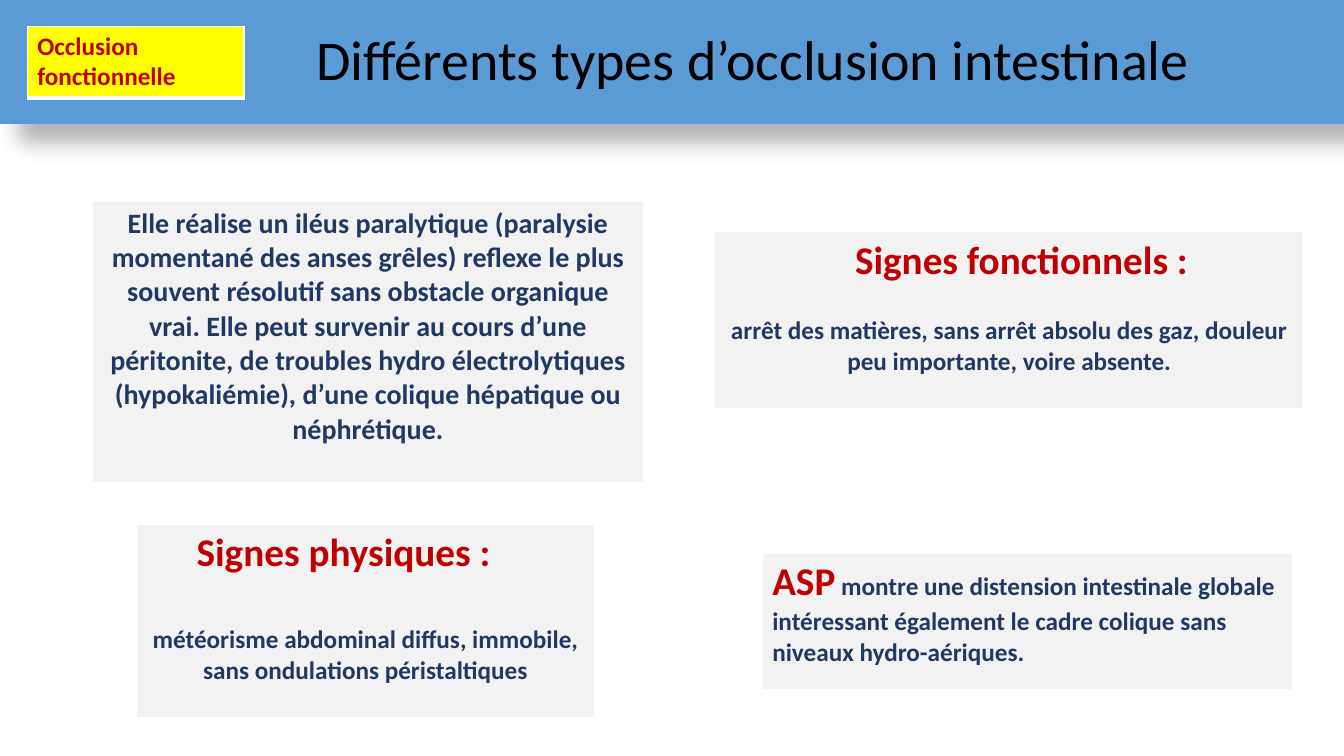
from dataclasses import dataclass

import lxml.etree
import pptx
import pptx.dml.color
import pptx.enum.shapes
import pptx.enum.text
import pptx.oxml
import pptx.oxml.ns
import pptx.util

Inches = pptx.util.Inches
Align = pptx.enum.text.PP_ALIGN


@dataclass(frozen=True)
class Theme:
    font: str = "Calibri"
    banner: str = "5B9BD5"
    title_color: str = "000000"
    panel: str = "F2F2F2"
    label: str = "FFFF00"
    border: str = "FFFFFF"
    accent: str = "C00000"
    body: str = "203864"
    title_size: int = 40
    heading_size: int = 28
    lead_size: int = 20
    body_size: int = 18


THEME = Theme()


@dataclass(frozen=True)
class Span:
    text: str
    size: int = THEME.body_size
    color: str = THEME.body


@dataclass(frozen=True)
class Para:
    spans: tuple[Span, ...]
    align: Align = Align.LEFT
    indent: float = 0
    space_before: int = 0


@dataclass(frozen=True)
class Panel:
    left: float
    top: float
    width: float
    height: float
    paras: tuple[Para, ...]
    fill: str = THEME.panel


def heading(text: str) -> Span:
    return Span(text, THEME.heading_size, THEME.accent)


PANELS = (
    Panel(0.92, 2, 5.46, 2.8, (
        Para((Span(
            "Elle réalise un iléus paralytique (paralysie momentané des anses grêles) "
            "reflexe le plus souvent résolutif sans obstacle organique vrai. Elle peut "
            "survenir au cours d’une péritonite, de troubles hydro électrolytiques "
            "(hypokaliémie), d’une colique hépatique ou néphrétique.",
            THEME.lead_size),), Align.CENTER),
    )),
    Panel(0.27, 0.26, 2.15, 0.7, (
        Para((Span("Occlusion fonctionnelle", color=THEME.accent),)),
    ), THEME.label),
    Panel(7.09, 2.3, 5.84, 1.77, (
        Para((heading("Signes fonctionnels :"),), indent=1.29),
        Para((Span("arrêt des matières, sans arrêt absolu des gaz, douleur "
                   "peu importante, voire absente."),), Align.CENTER, space_before=22),
    )),
    Panel(1.35, 5.2, 4.55, 1.93, (
        Para((heading("Signes physiques :"),), indent=0.5),
        Para((Span("météorisme abdominal diffus, immobile, "
                   "sans ondulations péristaltiques"),), Align.CENTER, space_before=34),
    )),
    Panel(7.56, 5.49, 5.26, 1.36, (
        Para((heading("ASP"),
              Span(" montre une distension intestinale globale intéressant également "
                   "le cadre colique sans niveaux hydro-aériques."))),
    )),
)


def rgb(color: str) -> pptx.dml.color.RGBColor:
    return pptx.dml.color.RGBColor.from_string(color)


def add_text(para, text: str, *, size: int, color: str, bold: bool = False) -> None:
    run = para.add_run()
    run.text = text
    run.font.name = THEME.font
    run.font.size = pptx.util.Pt(size)
    run.font.bold = bold
    run.font.color.rgb = rgb(color)


def add_shadow(shape) -> None:
    effects = pptx.oxml.parse_xml(
        f'<a:effectLst {pptx.oxml.ns.nsdecls("a")}>'
        f'<a:outerShdw blurRad="{pptx.util.Pt(15)}" dist="{pptx.util.Pt(18)}" '
        'dir="2700000" algn="tl" rotWithShape="0">'
        '<a:srgbClr val="000000"><a:alpha val="30000"/></a:srgbClr>'
        '</a:outerShdw></a:effectLst>')
    shape.element.spPr.append(effects)


def add_banner(page, text: str) -> None:
    banner = page.shapes.add_shape(
        pptx.enum.shapes.MSO_SHAPE.RECTANGLE, 0, 0, Inches(13.33), Inches(1.23))
    banner.fill.solid()
    banner.fill.fore_color.rgb = rgb(THEME.banner)
    banner.line.fill.background()
    add_shadow(banner)
    frame = banner.text_frame
    frame.word_wrap = True
    frame.margin_left = Inches(1.7)
    frame.vertical_anchor = pptx.enum.text.MSO_ANCHOR.MIDDLE
    para = frame.paragraphs[0]
    para.alignment = Align.CENTER
    para.line_spacing = 0.9
    add_text(para, text, size=THEME.title_size, color=THEME.title_color)


def add_borders(cell) -> None:
    properties = cell._tc.get_or_add_tcPr()
    for side, width in (("L", 1), ("R", 1), ("T", 1), ("B", 3)):
        line = lxml.etree.SubElement(
            properties, pptx.oxml.ns.qn(f"a:ln{side}"), w=str(pptx.util.Pt(width)))
        fill = lxml.etree.SubElement(line, pptx.oxml.ns.qn("a:solidFill"))
        lxml.etree.SubElement(fill, pptx.oxml.ns.qn("a:srgbClr"), val=THEME.border)


def add_panel(page, panel: Panel) -> None:
    table = page.shapes.add_table(
        1, 1, Inches(panel.left), Inches(panel.top),
        Inches(panel.width), Inches(panel.height)).table
    table.first_row = False
    table.horz_banding = False
    cell = table.cell(0, 0)
    add_borders(cell)
    cell.fill.solid()
    cell.fill.fore_color.rgb = rgb(panel.fill)
    frame = cell.text_frame
    for index, item in enumerate(panel.paras):
        para = frame.add_paragraph() if index else frame.paragraphs[0]
        para.alignment = item.align
        para.space_before = pptx.util.Pt(item.space_before)
        if item.indent:
            para._p.get_or_add_pPr().set("marL", str(Inches(item.indent)))
        for span in item.spans:
            add_text(para, span.text, size=span.size, color=span.color, bold=True)


def main() -> None:
    deck = pptx.Presentation()
    deck.slide_width = Inches(13.33)
    deck.slide_height = Inches(7.5)
    page = deck.slides.add_slide(deck.slide_layouts[6])
    add_banner(page, "Différents types d’occlusion intestinale")
    for panel in PANELS:
        add_panel(page, panel)
    deck.save("out.pptx")


if __name__ == "__main__":
    main()
